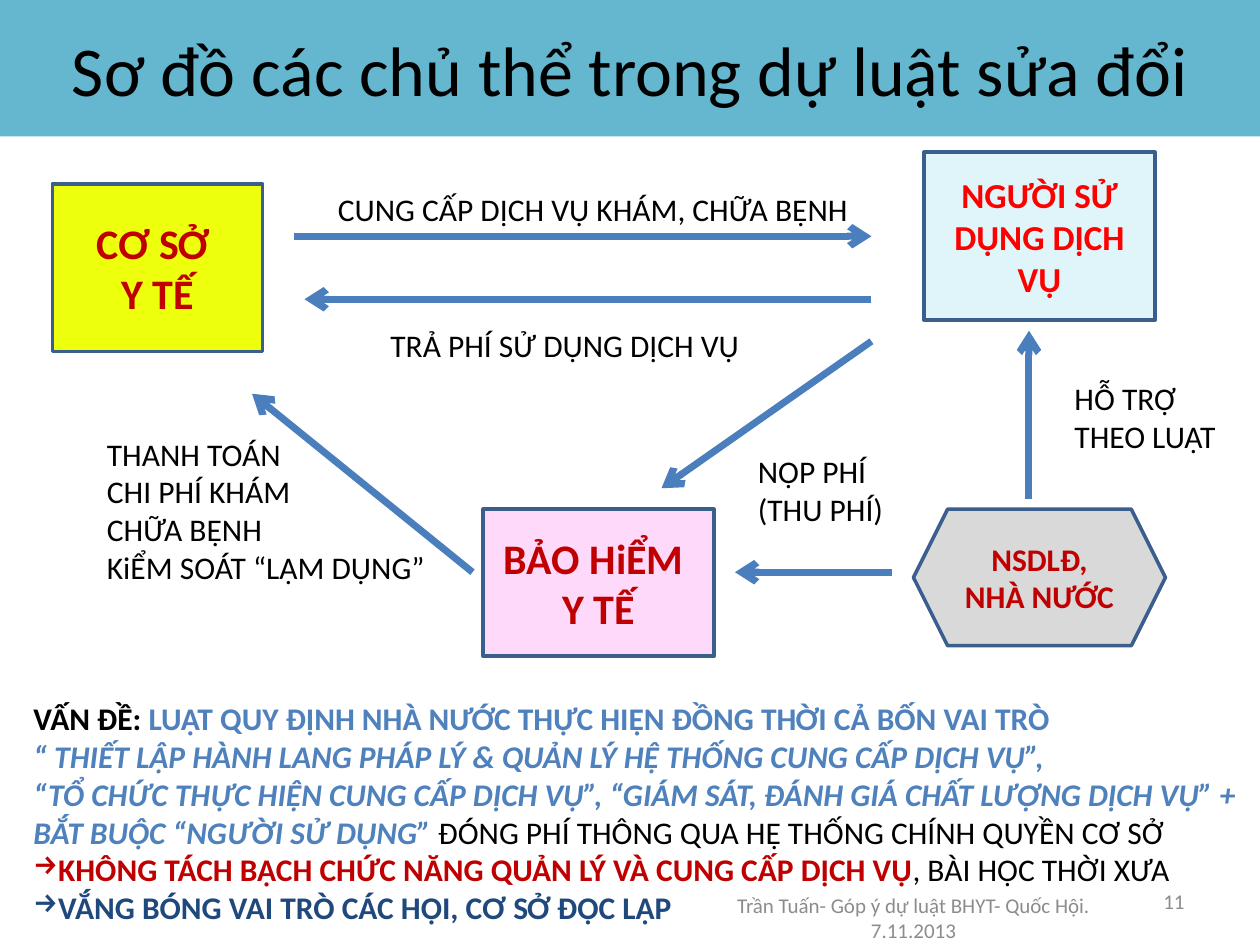
from pptx import Presentation
from pptx.dml.color import RGBColor
from pptx.enum.shapes import MSO_CONNECTOR as Connector, MSO_SHAPE as Preset
from pptx.enum.text import MSO_ANCHOR as Anchor, PP_ALIGN as Align
from pptx.oxml.ns import qn
from pptx.util import Inches, Pt
from lxml.etree import SubElement

THEME = dict(
    font="Calibri", black="000000", banner="64B7CE", border="3A5F8C", arrow="4B7EBC",
    yellow="EEFF0D", cyan="DFF5F9", pink="FFD9FA", grey="D9D9D9", muted="8C8C8C",
    blue="4F81BD", navy="1F497D", red="C00000", bright="FF0000",
    title=40, large=24, medium=20, body=18, small=12, border_width=2, arrow_width=4,
)
COLUMNS, ROWS = 240, 180

deck = Presentation()
deck.slide_width, deck.slide_height = Inches(10), Inches(7.5)
column, row = deck.slide_width / COLUMNS, deck.slide_height / ROWS
page = deck.slides.add_slide(deck.slide_layouts[6])


def place(*cells):
    return [round(cell * (row if index % 2 else column)) for index, cell in enumerate(cells)]


def write(box, text, size="body", color="black", bold=False, align=Align.LEFT,
          anchor=Anchor.TOP, wrap=True):
    frame = box.text_frame
    frame.word_wrap = wrap
    frame.vertical_anchor = anchor
    lines = text.split("\n") if isinstance(text, str) else text
    for index, line in enumerate(lines):
        para = frame.paragraphs[0] if index == 0 else frame.add_paragraph()
        para.alignment = align
        parts = [(line, color, bold, False)] if isinstance(line, str) else line
        for words, tint, strong, slanted in parts:
            span = para.add_run()
            span.text = words
            span.font.name = THEME["font"]
            span.font.size = Pt(THEME[size])
            span.font.bold, span.font.italic = strong, slanted
            span.font.color.rgb = RGBColor.from_string(THEME[tint])


shapes = [
    (Preset.RECTANGLE, (0, 0, 240, 26), "banner", None,
     "Sơ đồ các chủ thể trong dự luật sửa đổi", "title", "black"),
    (Preset.RECTANGLE, (10, 35, 40, 32), "yellow", "border", "CƠ SỞ \nY TẾ", "large", "red"),
    (Preset.RECTANGLE, (176, 29, 44, 32), "cyan", "border",
     "NGƯỜI SỬ DỤNG DỊCH VỤ", "medium", "bright"),
    (Preset.RECTANGLE, (92, 97, 44, 28), "pink", "border", "BẢO HiỂM \nY TẾ", "large", "red"),
    (Preset.HEXAGON, (174, 97, 48, 26), "grey", "border", "NSDLĐ, NHÀ NƯỚC", "body", "red"),
]
for preset, cells, fill, border, text, size, color in shapes:
    box = page.shapes.add_shape(preset, *place(*cells))
    box.shadow.inherit = False
    box.fill.solid()
    box.fill.fore_color.rgb = RGBColor.from_string(THEME[fill])
    if border:
        box.line.color.rgb = RGBColor.from_string(THEME[border])
        box.line.width = Pt(THEME["border_width"])
    else:
        box.line.fill.background()
    write(box, text, size=size, color=color, bold=border is not None,
          align=Align.CENTER, anchor=Anchor.MIDDLE)

arrows = [
    (56, 45, 166, 45),
    (166, 57, 58, 57),
    (166, 65, 126, 93),
    (90, 109, 48, 75),
    (170, 109, 140, 109),
    (196, 95, 196, 63),
]
for cells in arrows:
    arrow = page.shapes.add_connector(Connector.STRAIGHT, *place(*cells))
    arrow.line.color.rgb = RGBColor.from_string(THEME["arrow"])
    arrow.line.width = Pt(THEME["arrow_width"])
    SubElement(arrow.line._get_or_add_ln(), qn("a:tailEnd"), type="arrow")
    SubElement(arrow._element.spPr, qn("a:effectLst"))

labels = [
    ((62, 35, 103, 9.6), "CUNG CẤP DỊCH VỤ KHÁM, CHỮA BỆNH"),
    ((72, 61, 73.4, 9.6), "TRẢ PHÍ SỬ DỤNG DỊCH VỤ"),
    ((18, 81.6, 66, 31.4), "THANH TOÁN\nCHI PHÍ KHÁM\nCHỮA BỆNH\nKiỂM SOÁT “LẠM DỤNG”"),
    ((142, 85, 29, 17), "NỘP PHÍ\n(THU PHÍ)"),
    ((202.3, 71, 32, 17), "HỖ TRỢ\nTHEO LUẬT"),
]
for cells, text in labels:
    write(page.shapes.add_textbox(*place(*cells)), text, wrap=False)

issues = [
    [("VẤN ĐỀ: ", "black", True, False),
     ("LUẬT QUY ĐỊNH NHÀ NƯỚC THỰC HIỆN ĐỒNG THỜI CẢ BỐN VAI TRÒ", "blue", True, False)],
    [("“ THIẾT LẬP HÀNH LANG PHÁP LÝ & QUẢN LÝ HỆ THỐNG CUNG CẤP DỊCH VỤ”,",
      "blue", True, True)],
    [("“TỔ CHỨC THỰC HIỆN CUNG CẤP DỊCH VỤ”, “GIÁM SÁT, ĐÁNH GIÁ CHẤT LƯỢNG DỊCH VỤ” + "
      "BẮT BUỘC “NGƯỜI SỬ DỤNG”", "blue", True, True),
     (" ĐÓNG PHÍ THÔNG QUA HỆ THỐNG CHÍNH QUYỀN CƠ SỞ", "black", False, False)],
    [("KHÔNG TÁCH BẠCH CHỨC NĂNG QUẢN LÝ VÀ CUNG CẤP DỊCH VỤ", "red", True, False),
     (", BÀI HỌC THỜI XƯA", "black", False, False)],
    [("VẮNG BÓNG VAI TRÒ CÁC HỘI, CƠ SỞ ĐỘC LẬP", "navy", True, False)],
]
summary = page.shapes.add_textbox(*place(4, 132, 236, 46))
write(summary, issues)
for para in summary.text_frame.paragraphs[-2:]:
    SubElement(para._p.get_or_add_pPr(), qn("a:buChar"), char="→")

footers = [
    ((172, 166.8, 56, 9.6), "11", Align.RIGHT),
    ((136, 170, 76, 9.6), "Trần Tuấn- Góp ý dự luật BHYT- Quốc Hội. 7.11.2013", Align.CENTER),
]
for cells, text, align in footers:
    write(page.shapes.add_textbox(*place(*cells)), text, size="small", color="muted",
          align=align, anchor=Anchor.MIDDLE)

deck.save("out.pptx")
